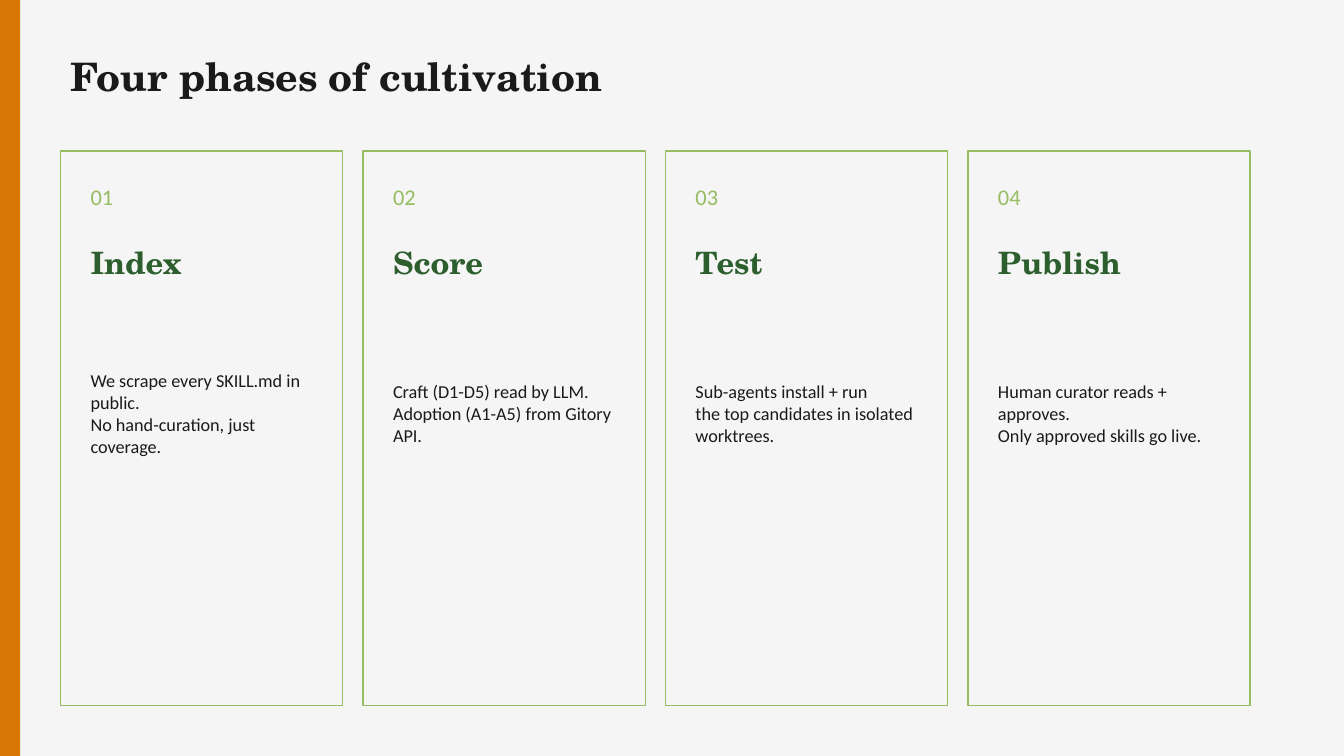
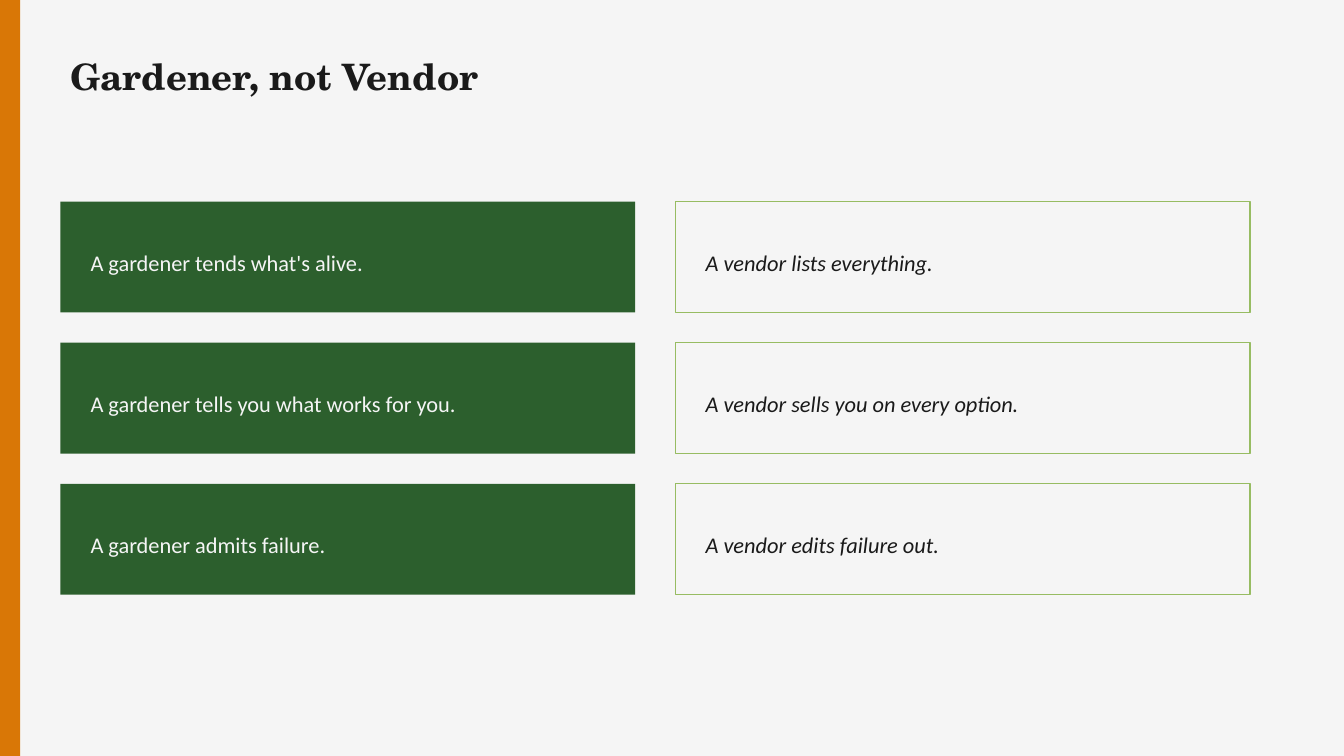
import pptx
import pptx.util
import pptx.dml.color
import pptx.enum.shapes
import pptx.enum.text

# Content
PHASES_TITLE = "Four phases of cultivation"
PHASES = [
    ("Index", ["We scrape every SKILL.md in public.",
               "No hand-curation, just coverage."]),
    ("Score", ["Craft (D1-D5) read by LLM.",
               "Adoption (A1-A5) from Gitory API."]),
    ("Test", ["Sub-agents install + run",
              "the top candidates in isolated worktrees."]),
    ("Publish", ["Human curator reads + approves.",
                 "Only approved skills go live."]),
]
CONTRAST_TITLE = "Gardener, not Vendor"
CONTRASTS = [
    ("A gardener tends what's alive.", "A vendor lists everything."),
    ("A gardener tells you what works for you.", "A vendor sells you on every option."),
    ("A gardener admits failure.", "A vendor edits failure out."),
]

# Shared style: 100 px to the inch
PX = 9144
WIDTH, HEIGHT = 1333, 750
LEFT, PAD = 60, 20
PAPER, INK = "F5F5F5", "1A1A1A"
FOREST, LEAF, ORANGE = "2C5F2D", "97BC62", "D97706"
HEADING, BODY = "TeX Gyre Schola", "Calibri"


def color(value):
    return pptx.dml.color.RGBColor.from_string(value)


def add_rect(s, x, y, w, h, fill, line=None):
    sp = s.shapes.add_shape(pptx.enum.shapes.MSO_SHAPE.RECTANGLE,
                            x * PX, y * PX, w * PX, h * PX)
    sp.shadow.inherit = False
    sp.fill.solid()
    sp.fill.fore_color.rgb = color(fill)
    if line:
        sp.line.color.rgb = color(line)
        sp.line.width = pptx.util.Pt(1)
    else:
        sp.line.fill.background()


def add_text(s, x, y, w, h, lines, size, ink, font=BODY, bold=False, italic=False):
    tf = s.shapes.add_textbox(x * PX, y * PX, w * PX, h * PX).text_frame
    tf.word_wrap = True
    tf.vertical_anchor = pptx.enum.text.MSO_ANCHOR.MIDDLE
    tf.text = "\n".join(lines)
    for p in tf.paragraphs:
        for r in p.runs:
            r.font.name = font
            r.font.size = pptx.util.Pt(size)
            r.font.color.rgb = color(ink)
            r.font.bold = bold
            r.font.italic = italic


def add_slide(prs, title, size):
    s = prs.slides.add_slide(prs.slide_layouts[6])
    s.background.fill.solid()
    s.background.fill.fore_color.rgb = color(PAPER)
    add_rect(s, 0, 0, 20, HEIGHT, ORANGE)
    add_text(s, LEFT, 40, 1200, 70, [title], size, INK, HEADING, bold=True)
    return s


def add_phases(prs):
    s = add_slide(prs, PHASES_TITLE, 28)
    top, card_w, card_h, gap, text_w = 150, 280, 550, 20, 250
    for i, (name, lines) in enumerate(PHASES):
        x = LEFT + i * (card_w + gap)
        add_rect(s, x, top, card_w, card_h, PAPER, LEAF)
        add_text(s, x + PAD, top + 20, text_w, 50, [f"{i + 1:02}"], 16, LEAF)
        add_text(s, x + PAD, top + 80, text_w, 60, [name], 22, FOREST, HEADING, bold=True)
        add_text(s, x + PAD, top + 160, text_w, 200, lines, 13, INK)


def add_contrasts(prs):
    s = add_slide(prs, CONTRAST_TITLE, 26)
    top, box_w, box_h, col_gap, row_gap = 200, 570, 110, 40, 30
    styles = [(FOREST, None, PAPER, False), (PAPER, LEAF, INK, True)]
    for row, pair in enumerate(CONTRASTS):
        y = top + row * (box_h + row_gap)
        for col, (text, style) in enumerate(zip(pair, styles)):
            fill, line, ink, italic = style
            x = LEFT + col * (box_w + col_gap)
            add_rect(s, x, y, box_w, box_h, fill, line)
            add_text(s, x + PAD, y + PAD, box_w - 2 * PAD, 80, [text], 16, ink, italic=italic)


def main():
    prs = pptx.Presentation()
    prs.slide_width, prs.slide_height = WIDTH * PX, HEIGHT * PX
    add_phases(prs)
    add_contrasts(prs)
    prs.save("out.pptx")


if __name__ == "__main__":
    main()
